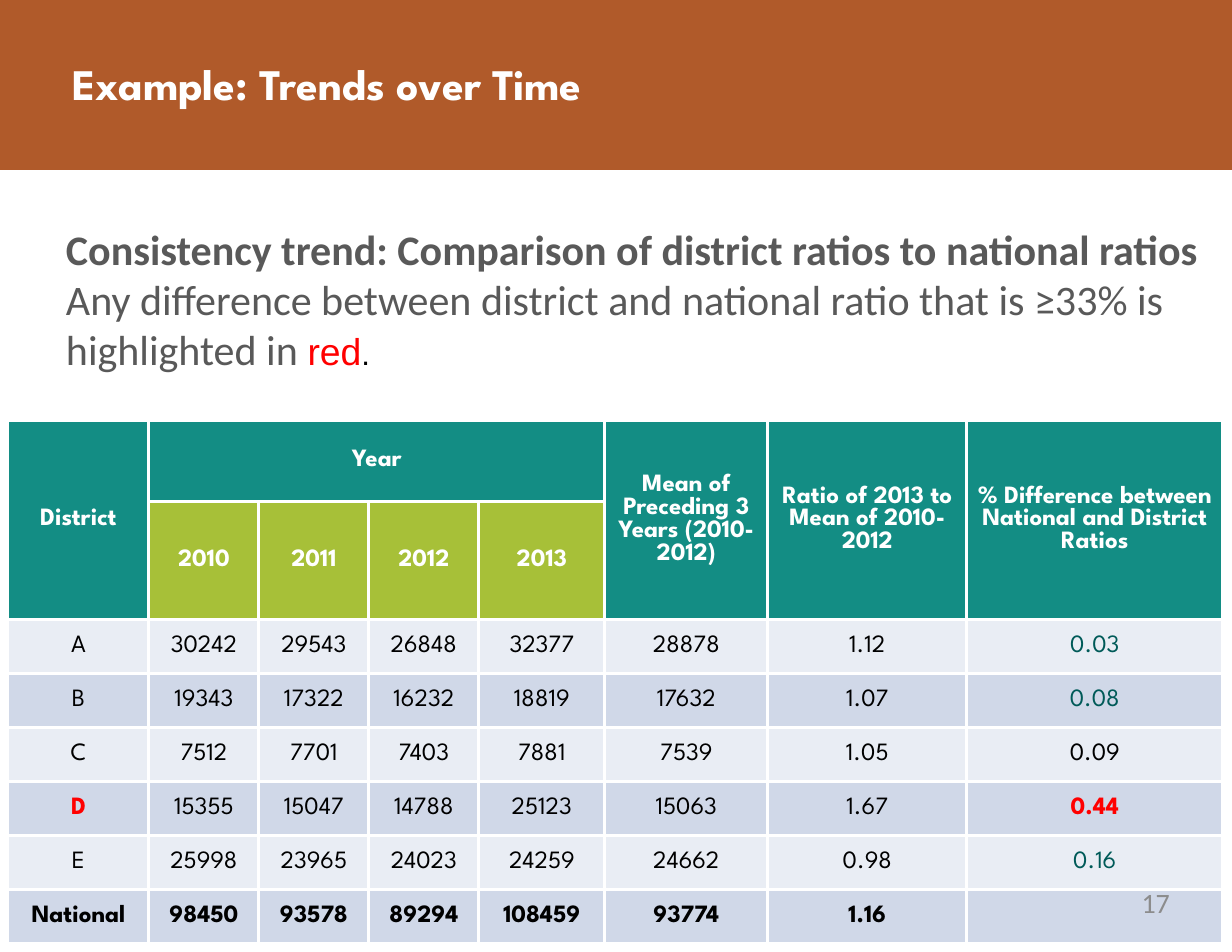
from lxml import etree
from pptx import Presentation
from pptx import util as u
from pptx.dml.color import RGBColor
from pptx.enum import shapes, text
from pptx.oxml import ns

PX = 914400 / 112
COLORS = {
    "band": "B05A2A", "white": "FFFFFF", "teal": "138D84", "lime": "A7C038",
    "light": "E9EDF4", "dark": "D0D8E8", "black": "000000", "green": "005A58",
    "red": "FF0000", "body": "595959", "number": "8C8C8C",
}
HEADS = [
    ["District", "Year", "", "", "", "Mean of Preceding 3 Years (2010-2012)",
     "Ratio of 2013 to Mean of 2010-2012",
     "% Difference between National and District Ratios"],
    ["", "2010", "2011", "2012", "2013", "", "", ""],
]
ROWS = [
    ["A", "30242", "29543", "26848", "32377", "28878", "1.12", "0.03"],
    ["B", "19343", "17322", "16232", "18819", "17632", "1.07", "0.08"],
    ["C", "7512", "7701", "7403", "7881", "7539", "1.05", "0.09"],
    ["D", "15355", "15047", "14788", "25123", "15063", "1.67", "0.44"],
    ["E", "25998", "23965", "24023", "24259", "24662", "0.98", "0.16"],
    ["National", "98450", "93578", "89294", "108459", "93774", "1.16", ""],
]
MERGES = [(0, 0, 1, 0), (0, 1, 0, 4), (0, 5, 1, 5), (0, 6, 1, 6), (0, 7, 1, 7)]
WIDTHS = [141, 110, 110, 110, 126, 163, 199, 256]
HEIGHTS = [82, 118] + [54] * len(ROWS)
ACCENTS = {"0.03": "green", "0.08": "green", "0.16": "green",
           "D": "red", "0.44": "red"}


def px(n):
    return u.Emu(round(n * PX))


def rgb(name):
    return RGBColor.from_string(COLORS[name])


class Deck:
    font = "League Spartan"

    def __init__(self, width, height):
        self.prs = Presentation()
        self.prs.slide_width, self.prs.slide_height = px(width), px(height)
        self.s = self.prs.slides.add_slide(self.prs.slide_layouts[5])

    def style(self, r, size, color, bold=False, font=None):
        r.font.name = font or self.font
        r.font.size = u.Pt(size)
        r.font.bold = bold
        r.font.color.rgb = rgb(color)

    def frame(self, tf, mx, my, anchor):
        tf.word_wrap = True
        tf.auto_size = text.MSO_AUTO_SIZE.NONE
        tf.margin_left = tf.margin_right = px(mx)
        tf.margin_top = tf.margin_bottom = px(my)
        tf.vertical_anchor = anchor

    def band(self, x, y, w, h, color):
        sp = self.s.shapes.add_shape(
            shapes.MSO_SHAPE.RECTANGLE, px(x), px(y), px(w), px(h))
        sp.shadow.inherit = False
        sp.fill.solid()
        sp.fill.fore_color.rgb = rgb(color)
        sp.line.fill.background()
        self.s.shapes.element.insert(2, sp.element)

    def title(self, x, y, w, h, words):
        sp = self.s.shapes.title
        sp.left, sp.top, sp.width, sp.height = px(x), px(y), px(w), px(h)
        self.frame(sp.text_frame, 0, 0, text.MSO_ANCHOR.BOTTOM)
        sp.text_frame.text = words
        p = sp.text_frame.paragraphs[0]
        p.alignment = text.PP_ALIGN.LEFT
        self.style(p.runs[0], 28, "white", True)

    def text(self, x, y, w, h, paragraphs, mx=0, my=0, align=text.PP_ALIGN.LEFT):
        tf = self.s.shapes.add_textbox(px(x), px(y), px(w), px(h)).text_frame
        self.frame(tf, mx, my, text.MSO_ANCHOR.TOP)
        for i, runs in enumerate(paragraphs):
            p = tf.add_paragraph() if i else tf.paragraphs[0]
            p.alignment = align
            for words, *look in runs:
                r = p.add_run()
                r.text = words
                self.style(r, *look)

    def borders(self, cell, color, points):
        tc_pr = cell._tc.get_or_add_tcPr()
        for side in ("a:lnL", "a:lnR", "a:lnT", "a:lnB"):
            ln = etree.SubElement(tc_pr, ns.qn(side), w=str(u.Pt(points)))
            fill = etree.SubElement(ln, ns.qn("a:solidFill"))
            etree.SubElement(fill, ns.qn("a:srgbClr"), val=COLORS[color])

    def cell(self, cell, words, fill, color, bold):
        self.borders(cell, "white", 2.25)
        cell.fill.solid()
        cell.fill.fore_color.rgb = rgb(fill)
        cell.margin_left = cell.margin_right = px(11)
        cell.margin_top = cell.margin_bottom = px(6)
        cell.vertical_anchor = text.MSO_ANCHOR.MIDDLE
        cell.text_frame.text = words
        p = cell.text_frame.paragraphs[0]
        p.alignment = text.PP_ALIGN.CENTER
        for r in p.runs:
            self.style(r, 16, color, bold)

    def table(self, x, y, widths, heights, heads, rows, merges):
        table = self.s.shapes.add_table(
            len(heights), len(widths), px(x), px(y),
            px(sum(widths)), px(sum(heights))).table
        for column, width in zip(table.columns, widths):
            column.width = px(width)
        for row, height in zip(table.rows, heights):
            row.height = px(height)
        for i, row in enumerate(heads):
            for j, words in enumerate(row):
                fill = "lime" if i == 1 and words else "teal"
                self.cell(table.cell(i, j), words, fill, "white", True)
        for i, row in enumerate(rows):
            for j, words in enumerate(row):
                color = ACCENTS.get(words, "black")
                bold = color == "red" or row is rows[-1]
                self.cell(table.cell(i + len(heads), j), words,
                          ("light", "dark")[i % 2], color, bold)
        for top, left, bottom, right in merges:
            table.cell(top, left).merge(table.cell(bottom, right))


def main():
    deck = Deck(1232, 952)
    deck.band(0, 0, 1232, 170, "band")
    deck.title(72, 56, 1160, 53, "Example: Trends over Time")
    deck.table(8, 420, WIDTHS, HEIGHTS, HEADS, ROWS, MERGES)
    deck.text(55, 217, 1177, 166, [
        [("Consistency trend: Comparison of district ratios to national ratios",
          27, "body", True, "Calibri")],
        [("Any difference between district and national ratio that is ≥33% is "
          "highlighted in ", 27, "body", False, "Calibri"),
         ("red", 24, "red", False, "Arial"),
         (".", 20, "black", False, "Arial")],
    ], mx=11, my=6)
    deck.text(887, 886, 283, 47, [[("17", 18, "number", False, "Calibri")]],
              align=text.PP_ALIGN.RIGHT)
    deck.prs.save("out.pptx")


if __name__ == "__main__":
    main()
